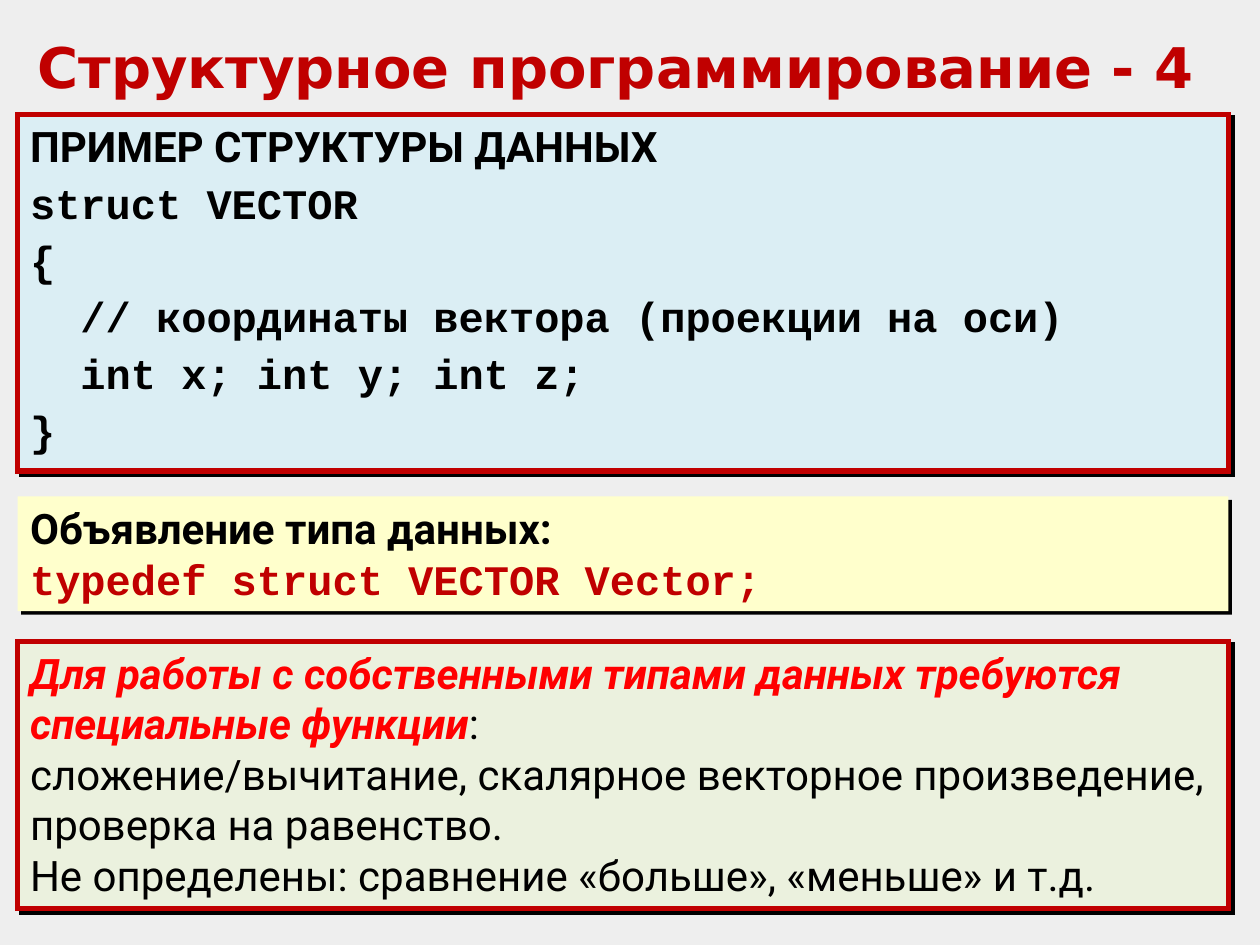
from dataclasses import dataclass

from lxml.etree import SubElement
from pptx import Presentation
from pptx.dml.color import RGBColor
from pptx.enum.shapes import MSO_SHAPE
from pptx.enum.text import MSO_ANCHOR, PP_ALIGN
from pptx.oxml.ns import qn
from pptx.util import Inches, Pt


@dataclass(frozen=True)
class Theme:
    background: str = "EEEEEE"
    accent: str = "C00000"
    emphasis: str = "FF0000"
    text: str = "000000"
    blue: str = "DBEEF4"
    yellow: str = "FFFFCC"
    green: str = "EBF1DE"
    title_font: str = "DejaVu Sans"
    body_font: str = "Roboto"
    code_font: str = "Courier New"
    title_size: int = 32
    body_size: int = 24


theme = Theme()


def write_text(shape, paragraphs, size, space_before=0):
    """Fill a shape with paragraphs, each a list of (text, font, colour, bold, italic) runs."""
    frame = shape.text_frame
    frame.word_wrap = True
    frame.vertical_anchor = MSO_ANCHOR.TOP
    for index, runs in enumerate(paragraphs):
        para = frame.add_paragraph() if index else frame.paragraphs[0]
        para.alignment = PP_ALIGN.LEFT
        if index and space_before:
            para.space_before = Pt(space_before)
        for text, font, colour, bold, italic in runs:
            span = para.add_run()
            span.text = text
            span.font.name = font
            span.font.size = Pt(size)
            span.font.bold = bold
            span.font.italic = italic
            span.font.color.rgb = RGBColor.from_string(colour)


def add_hard_shadow(shape):
    shape.shadow.inherit = False
    effects = shape._element.spPr.find(qn("a:effectLst"))
    shadow = SubElement(effects, qn("a:outerShdw"), blurRad="0", dist=str(Pt(2.8)),
                        dir="2700000", algn="ctr", rotWithShape="0")
    SubElement(shadow, qn("a:srgbClr"), val=theme.text)


deck = Presentation()
deck.slide_width = Inches(10)
deck.slide_height = Inches(7.5)
page = deck.slides.add_slide(deck.slide_layouts[6])
page.background.fill.solid()
page.background.fill.fore_color.rgb = RGBColor.from_string(theme.background)

title = page.shapes.add_textbox(Inches(0.2), Inches(0.21), Inches(9.61), Inches(0.64))
write_text(
    title,
    [[("Структурное программирование - 4", theme.title_font, theme.accent, True, False)]],
    theme.title_size,
)

code_lines = [
    "struct VECTOR",
    "{",
    "  // координаты вектора (проекции на оси)",
    "  int x; int y; int z;",
    "}",
]
structure = [[("ПРИМЕР СТРУКТУРЫ ДАННЫХ", theme.body_font, theme.text, True, False)]]
structure += [[(line, theme.code_font, theme.text, True, False)] for line in code_lines]

declaration = [
    [("Объявление типа данных:", theme.body_font, theme.text, True, False)],
    [("typedef struct VECTOR Vector;", theme.code_font, theme.accent, True, False)],
]

functions = [
    [
        ("Для работы с собственными типами данных требуются специальные функции",
         theme.body_font, theme.emphasis, True, True),
        (":", theme.body_font, theme.text, False, False),
    ],
    [("сложение/вычитание, скалярное векторное произведение, проверка на равенство.",
      theme.body_font, theme.text, False, False)],
    [("Не определены: сравнение «больше», «меньше» и т.д.",
      theme.body_font, theme.text, False, False)],
]

# top, height, fill, outlined, space before, paragraphs
panels = [
    (0.91, 2.83, theme.blue, True, 0.15 * theme.body_size, structure),
    (3.94, 0.91, theme.yellow, False, 0, declaration),
    (5.09, 2.12, theme.green, True, 0, functions),
]
for top, height, fill, outlined, space_before, paragraphs in panels:
    box = page.shapes.add_shape(
        MSO_SHAPE.RECTANGLE, Inches(0.14), Inches(top), Inches(9.61), Inches(height)
    )
    box.fill.solid()
    box.fill.fore_color.rgb = RGBColor.from_string(fill)
    if outlined:
        box.line.color.rgb = RGBColor.from_string(theme.accent)
        box.line.width = Pt(3)
        SubElement(box._element.spPr.find(qn("a:ln")), qn("a:miter"), lim="800000")
    else:
        box.line.fill.background()
    add_hard_shadow(box)
    write_text(box, paragraphs, theme.body_size, space_before)

deck.save("out.pptx")
